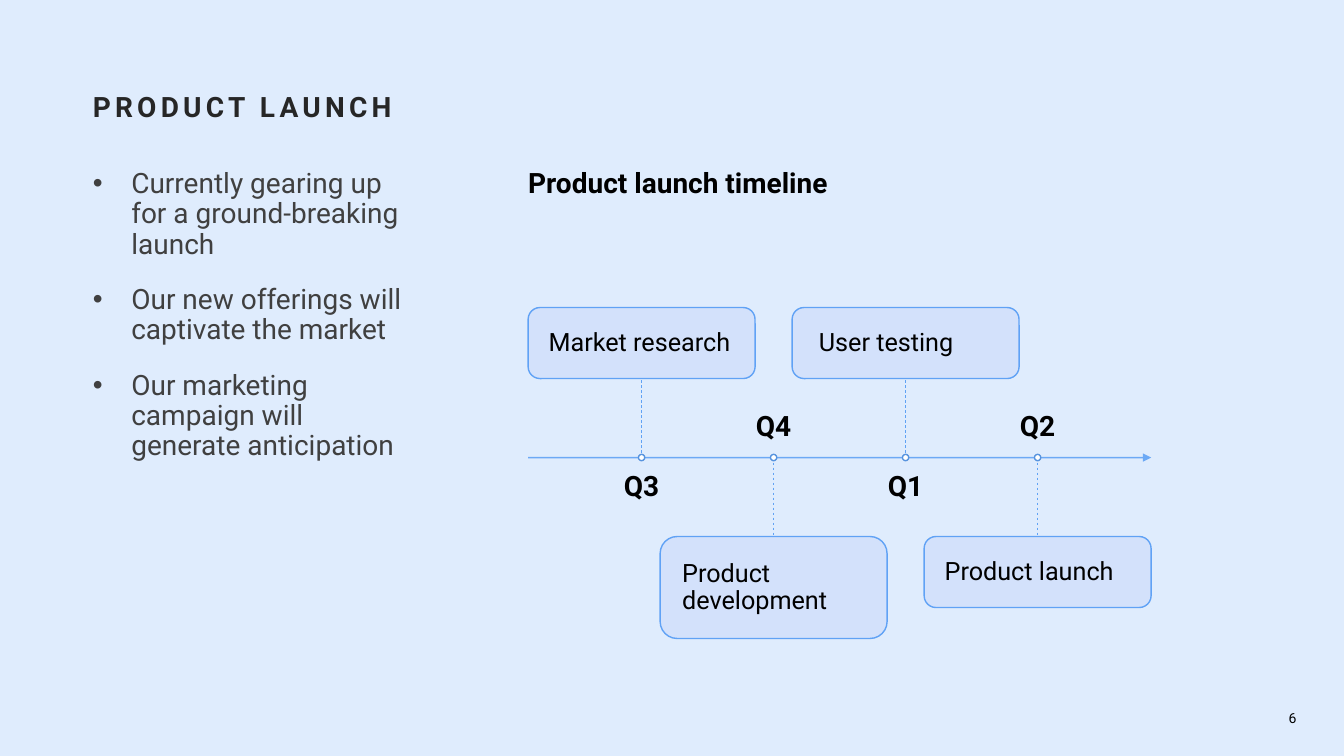
from lxml import etree
from pptx import Presentation
from pptx.dml.color import RGBColor
from pptx.enum.dml import MSO_LINE
from pptx.enum.shapes import MSO_CONNECTOR, MSO_SHAPE
from pptx.enum.text import MSO_ANCHOR, MSO_AUTO_SIZE, PP_ALIGN
from pptx.oxml.ns import qn
from pptx.util import Cm, Pt

BACKGROUND = RGBColor(0xDF, 0xEC, 0xFD)
TITLE_INK = RGBColor(0x26, 0x26, 0x26)
BODY_INK = RGBColor(0x40, 0x40, 0x40)
BLACK = RGBColor(0, 0, 0)
WHITE = RGBColor(0xFF, 0xFF, 0xFF)
BLUE = RGBColor(0x60, 0xA2, 0xF5)
DOT_BLUE = RGBColor(0x57, 0x93, 0xDE)
CARD_FILL = RGBColor(0xD2, 0xE0, 0xFB)
FONT = "Roboto"

BULLETS = [
    "Currently gearing up for a ground-breaking launch",
    "Our new offerings will captivate the market",
    "Our marketing campaign will generate anticipation",
]
# Quarter, milestone, card height in cm; cards alternate above and below the axis
MILESTONES = [
    ("Q3", "Market research", 1.79),
    ("Q4", "Product development", 2.57),
    ("Q1", " User testing", 1.79),
    ("Q2", "Product launch", 1.79),
]


def write(tf, *texts, size=20, color=BLACK, bold=False, align=PP_ALIGN.LEFT,
          anchor=MSO_ANCHOR.TOP, inset=0, after=0, tracking=0, bullet=False):
    """Fill a text frame with one paragraph per text."""
    tf.word_wrap = True
    tf.auto_size = MSO_AUTO_SIZE.NONE
    tf.vertical_anchor = anchor
    tf.margin_left = tf.margin_right = tf.margin_top = tf.margin_bottom = Cm(inset)
    for i, text in enumerate(texts):
        p = tf.add_paragraph() if i else tf.paragraphs[0]
        p.alignment, p.line_spacing = align, 0.9
        p.space_before, p.space_after = Pt(0), Pt(after)
        if bullet:
            pPr = p._p.get_or_add_pPr()
            pPr.set("marL", str(Cm(0.97)))
            pPr.set("indent", str(-Cm(0.97)))
            etree.SubElement(pPr, qn("a:buFont")).set("typeface", "Arial")
            etree.SubElement(pPr, qn("a:buChar")).set("char", "•")
        r = p.add_run()
        r.text = text
        r.font.name, r.font.size, r.font.bold = FONT, Pt(size), bold
        r.font.color.rgb = color
        if tracking:
            r._r.get_or_add_rPr().set("spc", str(tracking * 100))


def add_text(shapes, x, y, w, h, *texts, **fmt):
    write(shapes.add_textbox(Cm(x), Cm(y), Cm(w), Cm(h)).text_frame, *texts, **fmt)


def set_alpha(fill_format, percent):
    color = fill_format._xPr.find(qn("a:solidFill"))[0]
    etree.SubElement(color, qn("a:alpha")).set("val", str(percent * 1000))


def add_line(shapes, x1, y1, x2, y2, width):
    line = shapes.add_connector(MSO_CONNECTOR.STRAIGHT, Cm(x1), Cm(y1), Cm(x2), Cm(y2))
    line.line.color.rgb, line.line.width = BLUE, Pt(width)
    etree.SubElement(line._element.spPr, qn("a:effectLst"))
    return line


def add_outlined(shapes, kind, x, y, w, h, fill, outline):
    sp = shapes.add_shape(kind, Cm(x), Cm(y), Cm(w), Cm(h))
    sp.shadow.inherit = False
    sp.fill.solid()
    sp.fill.fore_color.rgb = fill
    sp.line.color.rgb, sp.line.width = outline, Pt(1)
    return sp


def add_title(slide, x, y, w, h):
    title = slide.shapes.title
    title.left, title.top, title.width, title.height = Cm(x), Cm(y), Cm(w), Cm(h)
    write(title.text_frame, "PRODUCT LAUNCH", color=TITLE_INK, bold=True, tracking=3)


def add_timeline(slide, x, y, w, h):
    card_w, stem, dot = 5.72, 1.99, 0.16
    label_w, label_h, label_gap = 5.03, 1.19, 0.38
    step = (w - card_w) / (len(MILESTONES) - 1)
    axis_y = y + MILESTONES[0][2] + stem
    shapes = slide.shapes.add_group_shape().shapes

    # Time axis
    axis = add_line(shapes, x, axis_y, x + w, axis_y, 1)
    set_alpha(axis.line.fill, 90)
    etree.SubElement(axis.line._ln, qn("a:tailEnd")).set("type", "triangle")

    for i, (quarter, milestone, card_h) in enumerate(MILESTONES):
        above = i % 2 == 0
        card_x = x + i * step
        mid = card_x + card_w / 2
        stem_end = axis_y - stem if above else axis_y + stem

        # Milestone card
        card = add_outlined(shapes, MSO_SHAPE.ROUNDED_RECTANGLE, card_x,
                            stem_end - card_h if above else stem_end,
                            card_w, card_h, CARD_FILL, BLUE)
        set_alpha(card.fill, 90)
        write(card.text_frame, milestone, size=18, anchor=MSO_ANCHOR.MIDDLE, inset=0.43)

        # Dashed stem and dot on the axis
        add_line(shapes, mid, axis_y, mid, stem_end, 0.5).line.dash_style = MSO_LINE.DASH
        add_outlined(shapes, MSO_SHAPE.OVAL, mid - dot / 2, axis_y - dot / 2,
                     dot, dot, WHITE, DOT_BLUE)

        # Quarter label on the side opposite the card
        label_y = axis_y + label_gap if above else axis_y - label_gap - label_h
        add_text(shapes, mid - label_w / 2, label_y, label_w, label_h, quarter,
                 bold=True, align=PP_ALIGN.CENTER,
                 anchor=MSO_ANCHOR.TOP if above else MSO_ANCHOR.BOTTOM)


def main():
    prs = Presentation()
    prs.slide_width, prs.slide_height = Cm(33.87), Cm(19.05)
    s = prs.slides.add_slide(prs.slide_layouts[5])
    s.background.fill.solid()
    s.background.fill.fore_color.rgb = BACKGROUND

    add_title(s, 2.34, 2.34, 29.11, 1.55)
    # Key points
    add_text(s.shapes, 2.34, 4.27, 7.95, 12.45, *BULLETS,
             color=BODY_INK, after=18, bullet=True)
    # Timeline with its heading
    add_text(s.shapes, 13.31, 4.27, 15.7, 1.55, "Product launch timeline", bold=True)
    add_timeline(s, 13.31, 7.75, 15.7, 8.34)
    # Slide number
    add_text(s.shapes, 30.33, 17.73, 2.34, 0.79, "6", size=10,
             align=PP_ALIGN.RIGHT, anchor=MSO_ANCHOR.MIDDLE)
    prs.save("out.pptx")


if __name__ == "__main__":
    main()
